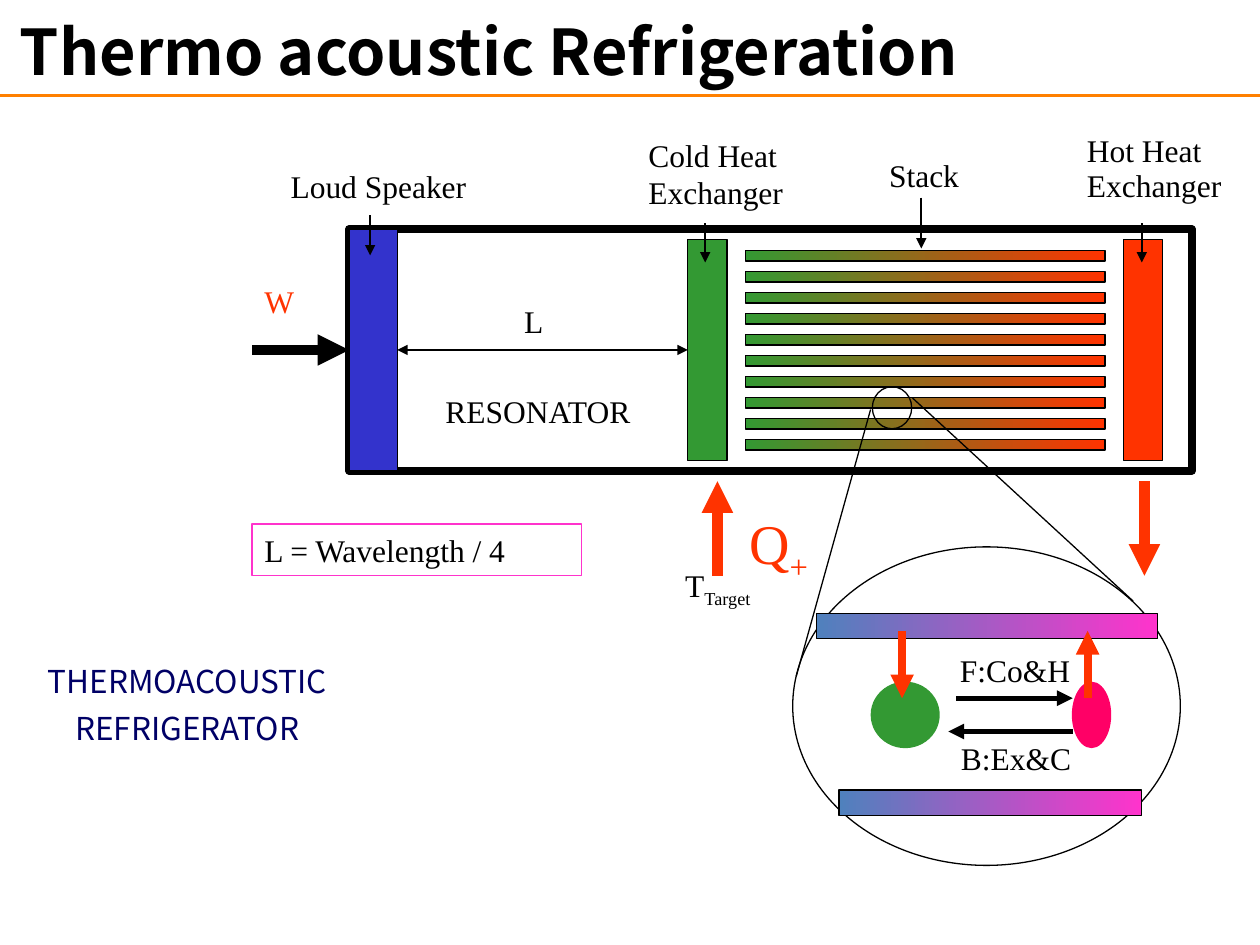
import dataclasses

import pptx
import pptx.util
import pptx.dml.color
import pptx.enum.shapes
import pptx.enum.text
import pptx.oxml.ns
from lxml import etree

Pt = pptx.util.Pt
RGBColor = pptx.dml.color.RGBColor
SHAPE = pptx.enum.shapes.MSO_SHAPE
ALIGN = pptx.enum.text.PP_ALIGN
ANCHOR = pptx.enum.text.MSO_ANCHOR

BLACK = RGBColor(0x00, 0x00, 0x00)
BLUE = RGBColor(0x33, 0x33, 0xCC)
GREEN = RGBColor(0x33, 0x99, 0x33)
RED = RGBColor(0xFF, 0x33, 0x00)
NAVY = RGBColor(0x00, 0x00, 0x66)
STEEL = RGBColor(0x4F, 0x81, 0xBD)
PINK = RGBColor(0xFF, 0x33, 0xCC)
ROSE = RGBColor(0xFF, 0x00, 0x66)
ORANGE = RGBColor(0xFF, 0x80, 0x00)

SERIF = "Times New Roman"
SANS = "Noto Sans CJK KR"


@dataclasses.dataclass
class Box:
    left: float
    top: float
    width: float
    height: float

    def inside(self, left, top, width, height):
        """Return a box whose place is measured from this box's corner."""
        return Box(self.left + left, self.top + top, width, height)

    def lengths(self):
        return [Pt(value) for value in dataclasses.astuple(self)]


def add_figure(page, box, fill=None, line=BLACK, weight=0.75, kind=SHAPE.RECTANGLE):
    """Add a preset shape; a pair of colours as fill gives a gradient to the right."""
    figure = page.shapes.add_shape(kind, *box.lengths())
    figure.shadow.inherit = False
    if fill is None:
        figure.fill.background()
    elif isinstance(fill, RGBColor):
        figure.fill.solid()
        figure.fill.fore_color.rgb = fill
    else:
        figure.fill.gradient()
        figure.fill.gradient_angle = 0
        for stop, color in zip(figure.fill.gradient_stops, fill):
            stop.color.rgb = color
    if line is None:
        figure.line.fill.background()
    else:
        figure.line.color.rgb = line
        figure.line.width = Pt(weight)
    return figure


def add_line(page, box, start, end, color=BLACK, weight=0.75, heads=()):
    """Draw a line between two points of the box; heads names its arrow ends."""
    points = [Pt(value) for x, y in (start, end) for value in (box.left + x, box.top + y)]
    line = page.shapes.add_connector(pptx.enum.shapes.MSO_CONNECTOR.STRAIGHT, *points)
    line.line.color.rgb = color
    line.line.width = Pt(weight)
    outline = line.line._get_or_add_ln()
    for head in heads:
        etree.SubElement(outline, pptx.oxml.ns.qn("a:" + head), type="triangle")
    etree.SubElement(line._element.spPr, pptx.oxml.ns.qn("a:effectLst"))
    return line


def write(frame, lines, size=18, color=BLACK, font=SERIF, align=ALIGN.LEFT,
          bold=False, spacing=None, gap=0, subscript=None):
    frame.word_wrap = True
    for index, text in enumerate(lines):
        para = frame.add_paragraph() if index else frame.paragraphs[0]
        para.alignment = align
        if spacing:
            para.line_spacing = spacing
        if index:
            para.space_before = Pt(gap)
        for part in filter(None, (text, subscript)):
            span = para.add_run()
            span.text = part
            span.font.name = font
            span.font.size = Pt(size)
            span.font.bold = bold
            span.font.color.rgb = color
            if part is subscript:
                span.font._element.set("baseline", "-25000")


def add_text(page, box, *lines, anchor=ANCHOR.TOP, **style):
    frame = page.shapes.add_textbox(*box.lengths()).text_frame
    frame.vertical_anchor = anchor
    write(frame, lines, **style)


def draw_heading(page, box):
    add_line(page, box, (0, 54.5), (box.width, 54.5), ORANGE, 2)
    add_text(page, box.inside(0, 0, 558.5, 57), "Thermo acoustic Refrigeration",
             size=36, font=SANS, bold=True, align=ALIGN.CENTER, anchor=ANCHOR.MIDDLE)


def draw_resonator(page, box):
    add_figure(page, box, weight=4.5)
    speaker = add_figure(page, box.inside(0, 0, 27.5, box.height), BLUE)
    cold, hot = [add_figure(page, box.inside(left, 6, 22.5, box.height - 12), color)
                 for left, color in ((193.5, GREEN), (442.5, RED))]
    for plate in range(10):
        add_figure(page, box.inside(226.5, 12.25 + 12 * plate, 205.5, 6), (GREEN, RED))
    add_figure(page, box.inside(299, 90, 22.5, 24), kind=SHAPE.OVAL)

    middle = box.height / 2
    work = add_line(page, box, (-55.5, middle), (0, middle), weight=6, heads=["tailEnd"])
    work.end_connect(speaker, 1)
    length = add_line(page, box, (27.5, middle), (193.5, middle),
                      heads=["headEnd", "tailEnd"])
    length.begin_connect(speaker, 3)
    length.end_connect(cold, 1)
    add_text(page, box.inside(-55.5, 26.5, 45, 29), "W", color=RED)
    add_text(page, box.inside(93, 38, 39, 29), "L")
    add_text(page, box.inside(48, 89.5, 138, 29), "RESONATOR")


def draw_part_labels(page, box):
    """Name the parts of the resonator that fills the box, each with a pointer."""
    add_text(page, box.inside(-40.5, -39, 188.5, 29), "Loud Speaker")
    add_text(page, box.inside(164, -57, 155, 50.5), "Cold Heat Exchanger")
    add_text(page, box.inside(301.5, -45.5, 94.5, 29), "Stack")
    add_text(page, box.inside(414.5, -50.5, 95, 39.5), "Hot Heat", "Exchanger",
             spacing=0.5, gap=9.5)
    for x, top, bottom in ((12, -8, 15), (203.5, -3.5, 19), (327, -18, 11), (453, -3.5, 19)):
        add_line(page, box, (x, top), (x, bottom), weight=1, heads=["tailEnd"])


def draw_heat_flows(page, box):
    add_text(page, box.inside(0, 30, 121.5, 52), "T", subscript="Target", spacing=1.6)
    add_text(page, box.inside(36.5, 12, 88.5, 45), "Q", subscript="+", size=32, color=RED)
    for x, head in ((25.5, "tailEnd"), (269.5, "headEnd")):
        add_line(page, box, (x, 54), (x, 0), RED, 6, [head])


def draw_magnified_stack(page, box):
    add_line(page, box, (44.5, -78.5), (2, 74))
    add_line(page, box, (68.5, -85), (194.5, 31))
    add_figure(page, box, kind=SHAPE.OVAL)
    for left, top, width in ((13.5, 38, 195), (26.5, 139, 173)):
        add_figure(page, box.inside(left, top, width, 14.5), (STEEL, PINK))
    for left, width, color in ((44.5, 39.5, GREEN), (159.5, 22.5, ROSE)):
        add_figure(page, box.inside(left, 77, width, 38), color, line=None, kind=SHAPE.OVAL)
    add_line(page, box, (93.5, 86.5), (160, 86.5), weight=3, heads=["tailEnd"])
    add_line(page, box, (160, 105.5), (89, 105.5), weight=3, heads=["tailEnd"])
    for x, head in ((62.5, "headEnd"), (168.5, "tailEnd")):
        add_line(page, box, (x, 86.5), (x, 48), RED, 4.5, [head])
    add_text(page, box.inside(88.5, 56, 100, 29), "F:Co&H")
    add_text(page, box.inside(89, 106, 116.5, 29), "B:Ex&C")


def draw_wavelength_rule(page, box):
    figure = add_figure(page, box, line=PINK)
    write(figure.text_frame, ["L = Wavelength / 4"])


def draw_caption(page, box):
    add_text(page, box, "THERMOACOUSTIC", "REFRIGERATOR", color=NAVY, font=SANS,
             align=ALIGN.CENTER, gap=5)


def main():
    deck = pptx.Presentation()
    deck.slide_width, deck.slide_height = Pt(720), Pt(540)
    page = deck.slides.add_slide(deck.slide_layouts[6])
    resonator = Box(199.5, 131, 481.5, 138)
    draw_heading(page, Box(0, 0, 720, 57))
    draw_caption(page, Box(18, 375, 178, 62))
    draw_resonator(page, resonator)
    draw_part_labels(page, resonator)
    draw_heat_flows(page, Box(384.5, 275, 270, 82))
    draw_magnified_stack(page, Box(453, 312.5, 221.5, 182))
    draw_wavelength_rule(page, Box(144, 299.5, 188.5, 29.5))
    deck.save("out.pptx")


if __name__ == "__main__":
    main()
